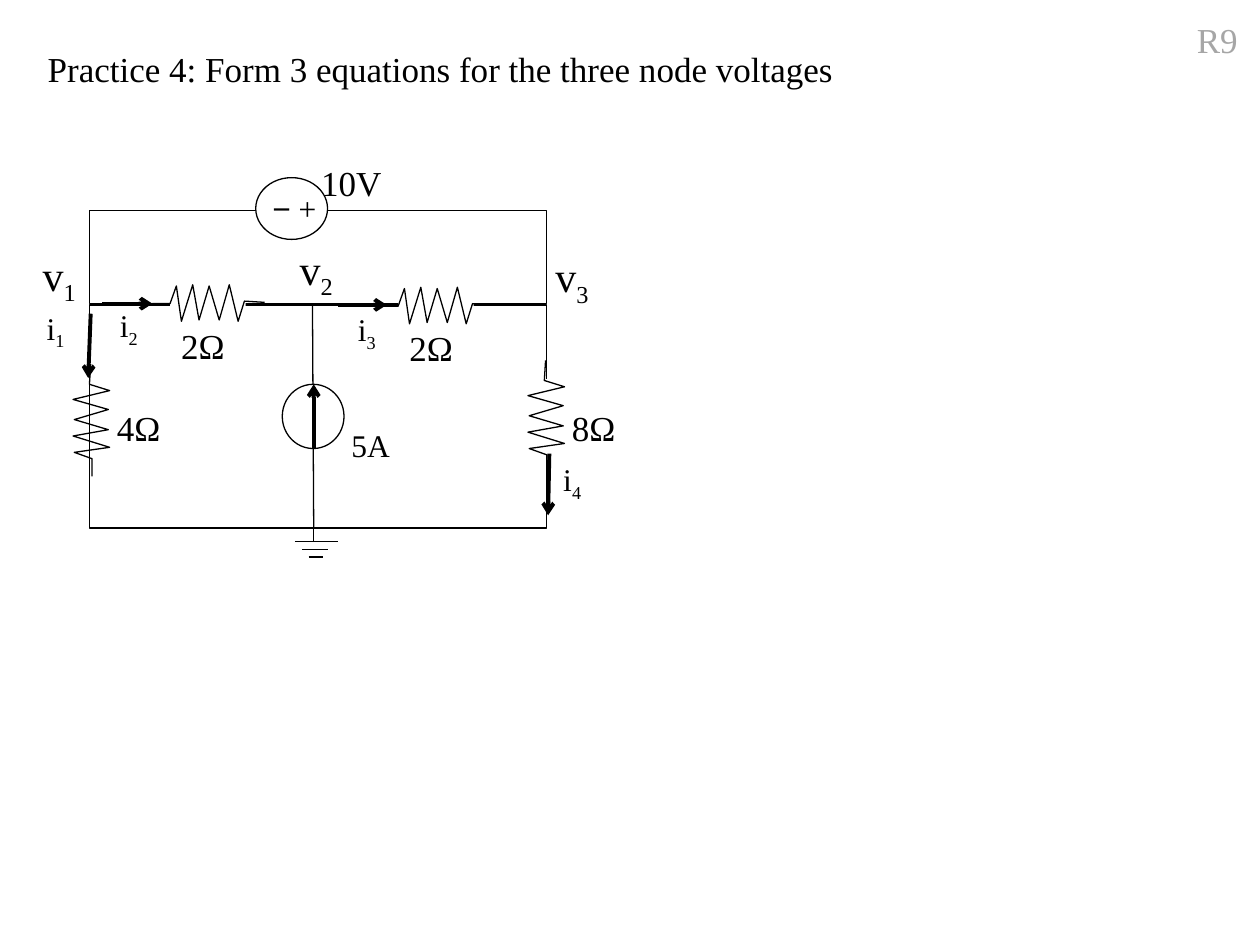
from dataclasses import dataclass

import pptx
import pptx.dml.color
import pptx.enum.shapes
import pptx.enum.text
import pptx.oxml
import pptx.oxml.ns
import pptx.util
from pptx.util import Inches

SHAPE = pptx.enum.shapes.MSO_SHAPE


@dataclass(frozen=True)
class Theme:
    font: str = "Times New Roman"
    sign_font: str = "Arial"
    ink: str = "000000"
    paper: str = "FFFFFF"
    muted: str = "A6A6A6"
    node: int = 24
    body: int = 20
    small: int = 18
    thin: float = 0.75
    thick: float = 2.25


THEME = Theme()

# Resistor outline: distance along the wire, distance across it
RESISTOR_LENGTH = 0.89
ZIGZAG = [(0, 0.15), (0.14, 0.15), (0.19, 0.01), (0.23, 0.29), (0.32, 0),
          (0.37, 0.28), (0.45, 0.01), (0.53, 0.28), (0.61, 0), (0.68, 0.29),
          (0.73, 0.13), (0.89, 0.14)]


def rgb(value):
    return pptx.dml.color.RGBColor.from_string(value)


def add_label(slide, x, y, width, height, text, size=THEME.body,
              color=THEME.ink, subscript=""):
    box = slide.shapes.add_textbox(Inches(x), Inches(y), Inches(width), Inches(height))
    frame = box.text_frame
    frame.word_wrap = False
    frame.auto_size = pptx.enum.text.MSO_AUTO_SIZE.SHAPE_TO_FIT_TEXT
    paragraph = frame.paragraphs[0]
    paragraph.font.name = THEME.font
    paragraph.font.size = pptx.util.Pt(size)
    paragraph.font.color.rgb = rgb(color)
    paragraph.add_run().text = text
    if subscript:
        run = paragraph.add_run()
        run.text = subscript
        run.font._element.set("baseline", "-25000")
    return box


def style_outline(shape, fill=None, line=THEME.ink):
    shape.shadow.inherit = False
    if fill:
        shape.fill.solid()
        shape.fill.fore_color.rgb = rgb(fill)
    else:
        shape.fill.background()
    if line:
        shape.line.color.rgb = rgb(line)
        shape.line.width = pptx.util.Pt(THEME.thin)
    else:
        shape.line.fill.background()


def add_outline(slide, kind, x, y, width, height, fill=None, line=THEME.ink):
    shape = slide.shapes.add_shape(kind, Inches(x), Inches(y), Inches(width), Inches(height))
    style_outline(shape, fill, line)


def add_wire(slide, x1, y1, x2, y2, arrow=False):
    wire = slide.shapes.add_connector(
        pptx.enum.shapes.MSO_CONNECTOR.STRAIGHT,
        Inches(x1), Inches(y1), Inches(x2), Inches(y2))
    wire.line.color.rgb = rgb(THEME.ink)
    wire.line.width = pptx.util.Pt(THEME.thick if arrow else THEME.thin)
    if arrow:
        tail = pptx.oxml.parse_xml(
            '<a:tailEnd %s type="arrow"/>' % pptx.oxml.ns.nsdecls("a"))
        wire.line._get_or_add_ln().append(tail)
    wire._element.spPr.append(
        pptx.oxml.parse_xml("<a:effectLst %s/>" % pptx.oxml.ns.nsdecls("a")))


def add_resistor(slide, x, y, upright=False, masked=True):
    """Draw a resistor, optionally hiding the wire behind it."""
    if masked:
        mask = (x + 0.01, y + 0.15, 0.27, 0.6) if upright else (x + 0.14, y + 0.01, 0.6, 0.27)
        add_outline(slide, SHAPE.RECTANGLE, *mask, fill=THEME.paper, line=None)
    points = [(x + across, y + RESISTOR_LENGTH - along) if upright
              else (x + along, y + across) for along, across in ZIGZAG]
    corners = [(Inches(px), Inches(py)) for px, py in points]
    builder = slide.shapes.build_freeform(*corners[0])
    builder.add_line_segments(corners[1:], close=False)
    style_outline(builder.convert_to_shape())


def add_ground(slide, x, y):
    add_wire(slide, x + 0.15, y, x + 0.15, y + 0.36)
    for left, right, drop in [(0, 0.34, 0.36), (0.06, 0.26, 0.42), (0.11, 0.22, 0.48)]:
        add_wire(slide, x + left, y + drop, x + right, y + drop)


def add_voltage_source(slide, x, y):
    add_outline(slide, SHAPE.OVAL, x + 0.04, y, 0.57, 0.49, fill=THEME.paper)
    polarity = add_label(slide, x, y, 0.62, 0.47, "+ ", THEME.small)
    minus = polarity.text_frame.paragraphs[0].add_run()
    minus.text = "−"
    minus.font.name = THEME.sign_font
    polarity.rotation = 180


def add_current_source(slide, x, y):
    add_outline(slide, SHAPE.OVAL, x, y, 0.49, 0.51, fill=THEME.paper)
    add_wire(slide, x + 0.25, y + 0.51, x + 0.25, y, arrow=True)


def add_heading(slide, x, y):
    add_label(slide, x + 9.12, y, 0.53, 0.44, "R9", color=THEME.muted)
    add_label(slide, x, y + 0.23, 6.48, 0.44,
              "Practice 4: Form 3 equations for the three node voltages")


def add_circuit(slide, x, y):
    # Wire loops and middle branch
    add_wire(slide, x + 2.28, y + 1.22, x + 2.29, y + 2.99)
    add_outline(slide, SHAPE.RECTANGLE, x + 0.51, y + 1.22, 3.63, 1.77)
    add_outline(slide, SHAPE.RECTANGLE, x + 0.51, y + 0.47, 3.63, 0.74)

    # Components
    add_resistor(slide, x + 0.38, y + 1.69, upright=True, masked=False)
    add_resistor(slide, x + 1.01, y + 1.06)
    add_resistor(slide, x + 2.82, y + 1.08)
    add_resistor(slide, x + 3.99, y + 1.66, upright=True)
    add_ground(slide, x + 2.14, y + 2.74)
    add_voltage_source(slide, x + 1.79, y + 0.21)
    add_current_source(slide, x + 2.04, y + 1.85)

    # Branch currents: arrow, then label position
    currents = [((0.52, 1.29, 0.5, 1.8), (0.01, 1.2)),
                ((0.61, 1.21, 1.01, 1.21), (0.59, 1.18)),
                ((2.48, 1.22, 2.87, 1.22), (2.48, 1.21)),
                ((4.16, 2.4, 4.15, 2.89), (4.11, 2.4))]
    for number, ((x1, y1, x2, y2), (left, top)) in enumerate(currents, 1):
        add_wire(slide, x + x1, y + y1, x + x2, y + y2, arrow=True)
        add_label(slide, x + left, y + top, 0.47, 0.47, " i", THEME.small,
                  subscript=str(number))

    # Node voltages
    for number, (left, top) in enumerate([(0.04, 0.73), (2.08, 0.68), (4.11, 0.74)], 1):
        add_label(slide, x + left, y + top, 0.48, 0.5, "v", THEME.node,
                  subscript=str(number))

    # Component values
    for value, left, top in [("4Ω", 0.63, 1.98), ("2Ω", 1.14, 1.33),
                             ("2Ω", 2.95, 1.34), ("8Ω", 4.24, 1.98)]:
        add_label(slide, x + left, y + top, 0.56, 0.44, value)
    add_label(slide, x + 2.25, y + 0.03, 0.69, 0.44, "10V")
    add_label(slide, x + 2.49, y + 2.13, 0.51, 0.4, "5A", THEME.small)


def main():
    deck = pptx.Presentation()
    deck.slide_width, deck.slide_height = Inches(10), Inches(7.5)
    slide = deck.slides.add_slide(deck.slide_layouts[6])
    add_heading(slide, 0.28, 0.1)
    add_circuit(slide, 0.2, 1.2)
    deck.save("out.pptx")


if __name__ == "__main__":
    main()
